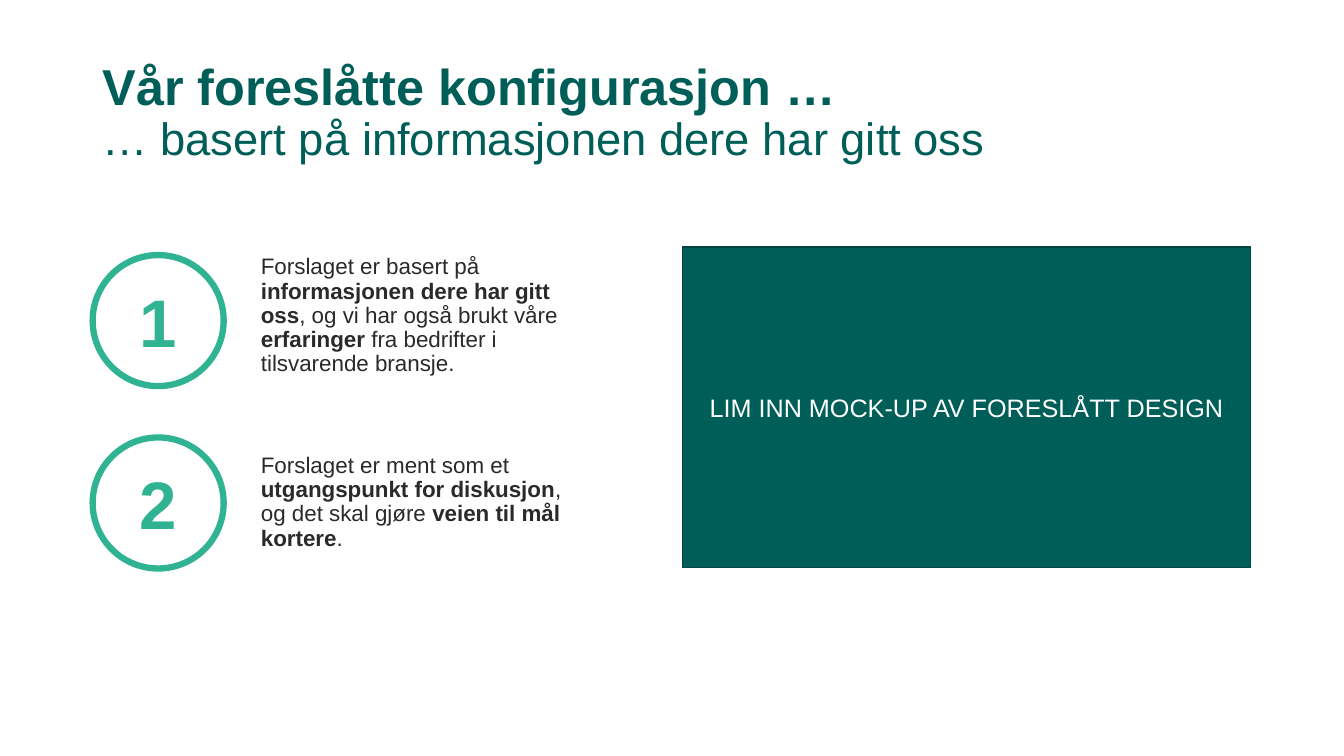
from dataclasses import dataclass

from pptx import Presentation
from pptx.dml.color import RGBColor
from pptx.enum.shapes import MSO_SHAPE
from pptx.enum.text import MSO_ANCHOR, PP_ALIGN
from pptx.slide import Slide
from pptx.text.text import TextFrame, _Paragraph
from pptx.util import Pt

OVAL = MSO_SHAPE.OVAL
RECTANGLE = MSO_SHAPE.RECTANGLE
MIDDLE = MSO_ANCHOR.MIDDLE
CENTER = PP_ALIGN.CENTER

DARK_GREEN = RGBColor(0x00, 0x5E, 0x58)
EDGE_GREEN = RGBColor(0x00, 0x46, 0x41)
MINT = RGBColor(0x30, 0xB3, 0x93)
INK = RGBColor(0x2B, 0x2A, 0x2A)
WHITE = RGBColor(0xFF, 0xFF, 0xFF)

FONT = "Arial"
LEFT = 66.2
CIRCLE_SIZE = 93.6
BODY_LEFT = 179.3
BODY_WIDTH = 242.6


@dataclass(frozen=True)
class Box:
    left: float
    top: float
    width: float
    height: float

    def emu(self) -> tuple[Pt, Pt, Pt, Pt]:
        return Pt(self.left), Pt(self.top), Pt(self.width), Pt(self.height)


@dataclass(frozen=True)
class Span:
    text: str
    bold: bool = False


@dataclass(frozen=True)
class Point:
    circle_top: float
    body_top: float
    body_height: float
    spans: tuple[Span, ...]


@dataclass(frozen=True)
class Label:
    text: str
    size: float
    color: RGBColor
    bold: bool = False


POINTS = (
    Point(182.2, 176.4, 98.6, (
        Span("Forslaget er basert på "),
        Span("informasjonen dere har gitt oss", True),
        Span(", og vi har også brukt våre "),
        Span("erfaringer", True),
        Span(" fra bedrifter i tilsvarende bransje."),
    )),
    Point(312.5, 312.5, 92.9, (
        Span("Forslaget er ment som et "),
        Span("utgangspunkt for diskusjon", True),
        Span(", og det skal gjøre "),
        Span("veien til mål kortere", True),
        Span("."),
    )),
)


def add_run(p: _Paragraph, label: Label) -> None:
    r = p.add_run()
    r.text = label.text
    r.font.name = FONT
    r.font.size = Pt(label.size)
    r.font.bold = label.bold
    r.font.color.rgb = label.color


def set_frame(tf: TextFrame) -> _Paragraph:
    tf.word_wrap = True
    tf.vertical_anchor = MIDDLE
    return tf.paragraphs[0]


def add_text(slide: Slide, box: Box) -> _Paragraph:
    p = set_frame(slide.shapes.add_textbox(*box.emu()).text_frame)
    p.line_spacing = 0.9
    return p


def add_shape(slide: Slide, kind: MSO_SHAPE, box: Box, fill: RGBColor | None,
              line: RGBColor, line_width: float, label: Label) -> None:
    sp = slide.shapes.add_shape(kind, *box.emu())
    sp.shadow.inherit = False
    if fill is None:
        sp.fill.background()
    else:
        sp.fill.solid()
        sp.fill.fore_color.rgb = fill
    sp.line.color.rgb = line
    sp.line.width = Pt(line_width)
    p = set_frame(sp.text_frame)
    p.alignment = CENTER
    add_run(p, label)


def add_title(slide: Slide) -> None:
    p = add_text(slide, Box(LEFT, 47.5, 828, 67))
    add_run(p, Label("Vår foreslåtte konfigurasjon …", 36, DARK_GREEN, True))
    p.add_line_break()
    add_run(p, Label("… basert på informasjonen dere har gitt oss", 32.4, DARK_GREEN))


def add_point(slide: Slide, number: int, point: Point) -> None:
    p = add_text(slide, Box(BODY_LEFT, point.body_top, BODY_WIDTH, point.body_height))
    for span in point.spans:
        add_run(p, Label(span.text, 16, INK, span.bold))
    circle = Box(LEFT, point.circle_top, CIRCLE_SIZE, CIRCLE_SIZE)
    add_shape(slide, OVAL, circle, None, MINT, 4.5, Label(str(number), 48, MINT, True))


def main() -> None:
    prs = Presentation()
    prs.slide_width, prs.slide_height = Pt(960), Pt(540)
    slide = prs.slides.add_slide(prs.slide_layouts[6])
    add_title(slide)
    for number, point in enumerate(POINTS, 1):
        add_point(slide, number, point)
    add_shape(slide, RECTANGLE, Box(487.4, 176.4, 406.1, 229), DARK_GREEN, EDGE_GREEN, 1,
              Label("LIM INN MOCK-UP AV FORESLÅTT DESIGN", 18, WHITE))
    prs.save("out.pptx")


if __name__ == "__main__":
    main()
